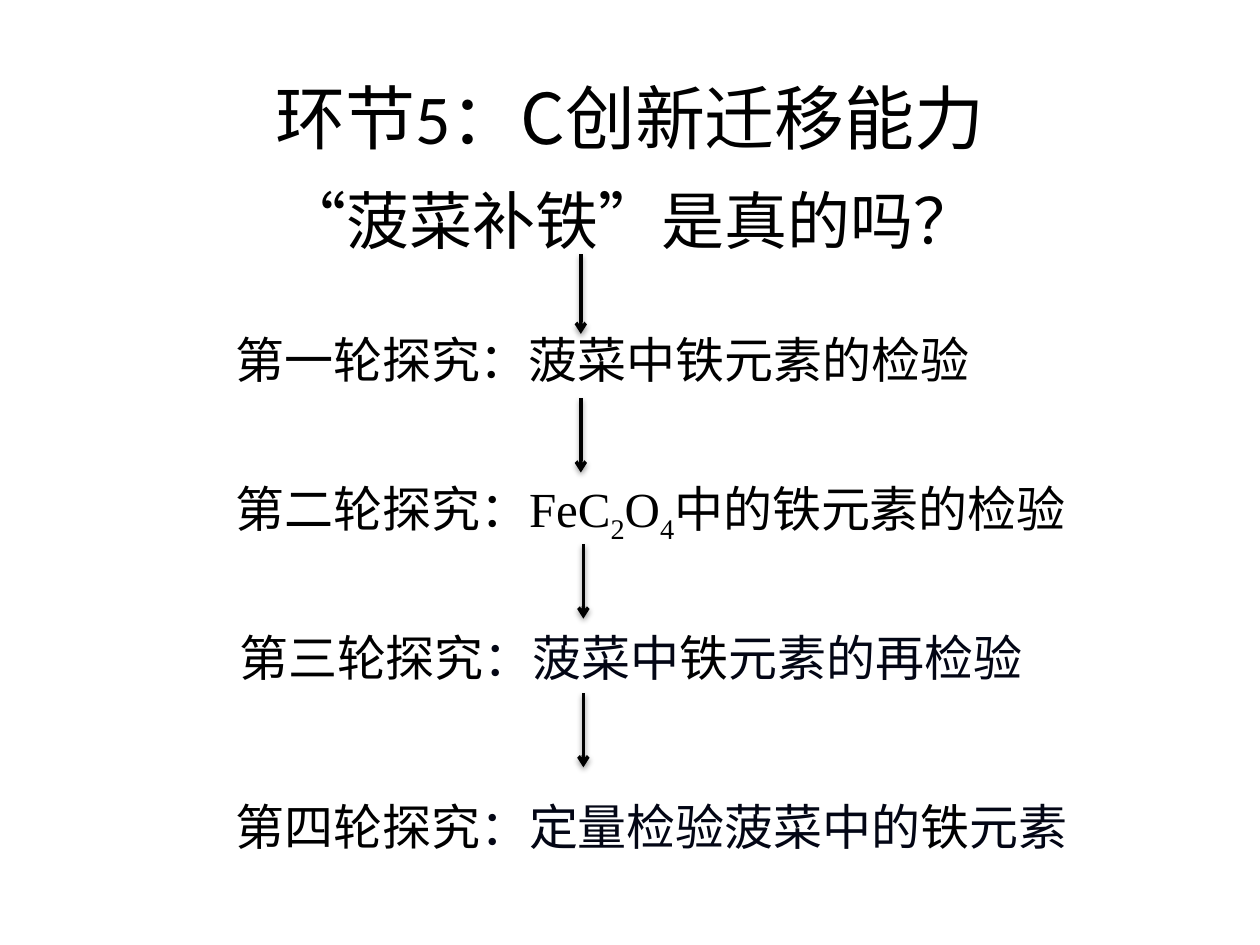
from lxml import etree
from pptx import Presentation
from pptx.dml.color import RGBColor
from pptx.enum import shapes, text
from pptx.oxml import ns, parse_xml
from pptx.util import Inches, Pt

BLACK = RGBColor(0, 0, 0)
NAVY = RGBColor(0x03, 0x06, 0x15)
HAN, LATIN, SERIF = "Noto Sans CJK SC", "Calibri", "Times New Roman"
SHADOW = (
    f'<a:effectLst {ns.nsdecls("a")}>'
    '<a:outerShdw blurRad="40000" dist="20000" dir="5400000" rotWithShape="0">'
    '<a:srgbClr val="000000"><a:alpha val="38000"/></a:srgbClr>'
    '</a:outerShdw></a:effectLst>'
)


def add_run(par, words, size=28, font=HAN, color=BLACK, base=0):
    """Add one run; base lowers the text, in percent."""
    run = par.add_run()
    run.text = words
    run.font.size = Pt(size)
    run.font.name = font
    run.font.color.rgb = color
    props = run.font._element
    etree.SubElement(props, ns.qn("a:ea")).set("typeface", HAN)
    if base:
        props.set("baseline", str(base * 1000))


def fill_text(frame, runs, size=28, align=None, before=0):
    """Write (words, format) pairs; before is a percent of the line."""
    frame.word_wrap = True
    par = frame.paragraphs[0]
    par.alignment = align
    if before:
        gap = etree.SubElement(par._p.get_or_add_pPr(), ns.qn("a:spcBef"))
        etree.SubElement(gap, ns.qn("a:spcPct")).set("val", str(before * 1000))
    for words, style in runs:
        add_run(par, words, size=size, **style)


def add_text(slide, box, runs, grow=True, **style):
    frame = slide.shapes.add_textbox(*map(Inches, box)).text_frame
    fill_text(frame, runs, **style)
    if grow:
        frame.auto_size = text.MSO_AUTO_SIZE.SHAPE_TO_FIT_TEXT


def add_arrow(slide, x, top, end):
    line = slide.shapes.add_connector(
        shapes.MSO_CONNECTOR.STRAIGHT,
        Inches(x), Inches(top), Inches(x), Inches(end))
    line.line.color.rgb = BLACK
    line.line.width = Pt(2)
    etree.SubElement(line.line._get_or_add_ln(),
                     ns.qn("a:tailEnd")).set("type", "arrow")
    line._element.spPr.append(parse_xml(SHADOW))


def main():
    deck = Presentation()
    deck.slide_width, deck.slide_height = Inches(10), Inches(7.5)
    slide = deck.slides.add_slide(deck.slide_layouts[5])
    han, latin, navy = {}, {"font": LATIN}, {"color": NAVY}
    serif, sub = {"font": SERIF}, {"font": SERIF, "base": -25}
    center = text.PP_ALIGN.CENTER

    # Title and question
    title = slide.shapes.title
    title.left, title.top = Inches(0.5), Inches(0.3)
    title.width, title.height = Inches(9), Inches(1.25)
    title.text_frame.vertical_anchor = text.MSO_ANCHOR.MIDDLE
    fill_text(title.text_frame,
              [("环节", han), ("5", latin), ("：C创新迁移能力", han)],
              size=40, align=center)
    add_text(slide, (0.5, 1.39, 9, 0.71),
             [("“", latin), ("菠菜补铁", han), ("”", latin),
              ("是真的吗？", han)],
             grow=False, size=36, align=center, before=20)

    # Arrows between the steps
    for x, top, end in ((4.61, 2.02, 2.65), (4.61, 3.16, 3.75),
                        (4.63, 4.32, 4.91), (4.63, 5.5, 6.09)):
        add_arrow(slide, x, top, end)

    # Four rounds of inquiry
    rounds = (
        (1.77, 2.57, 6.14, 20, [("第一轮探究：菠菜中铁元素的检验", han)]),
        (1.77, 3.75, 6.85, 20,
         [("第二轮探究", han), ("：FeC", serif), ("2", sub), ("O", serif),
          ("4", sub), ("中的铁元素的检验", serif)]),
        (1.8, 4.93, 7.05, 50,
         [("第三轮探究", han), ("：菠菜中", navy), ("铁", han),
          ("元素的再检验", navy)]),
        (1.77, 6.27, 7.05, 50,
         [("第四轮探究", han), ("：定量检验菠菜中的", navy), ("铁", han),
          ("元素", navy)]),
    )
    for left, top, width, before, runs in rounds:
        add_text(slide, (left, top, width, 0.57), runs, before=before)

    deck.save("out.pptx")


if __name__ == "__main__":
    main()
